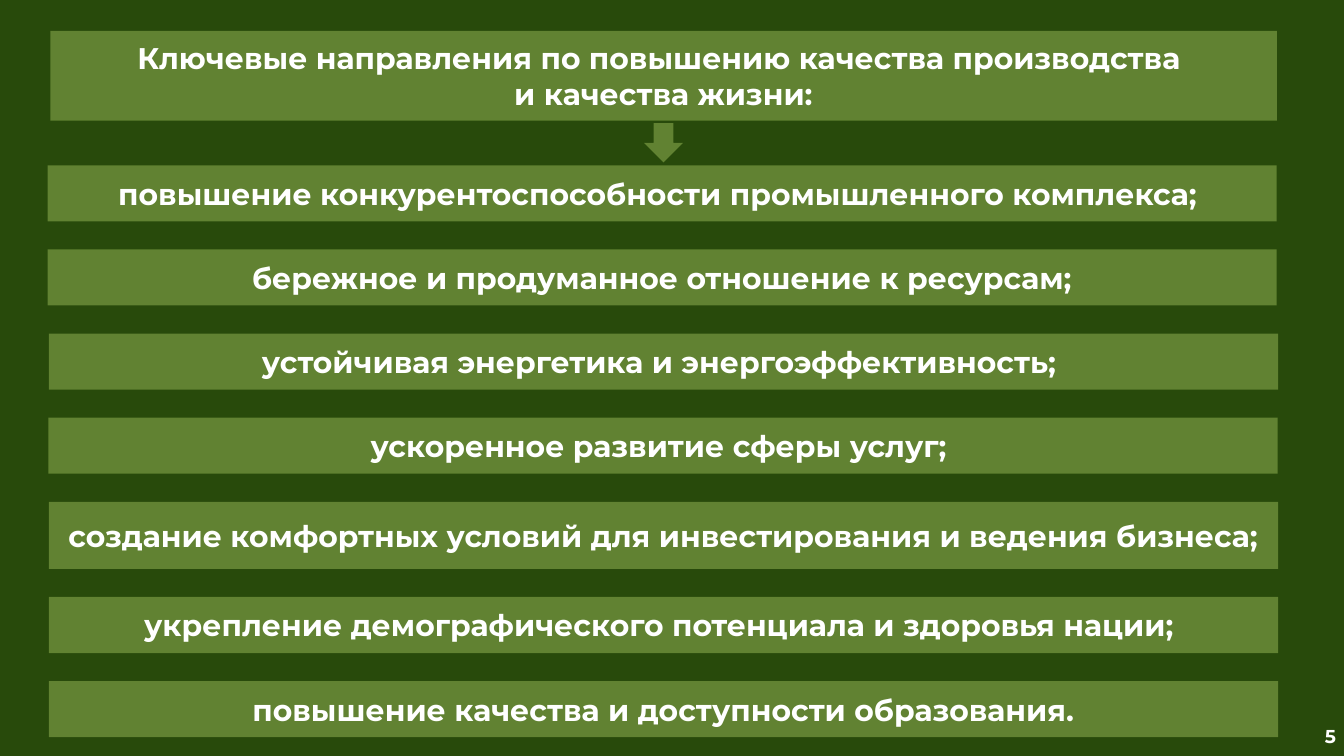
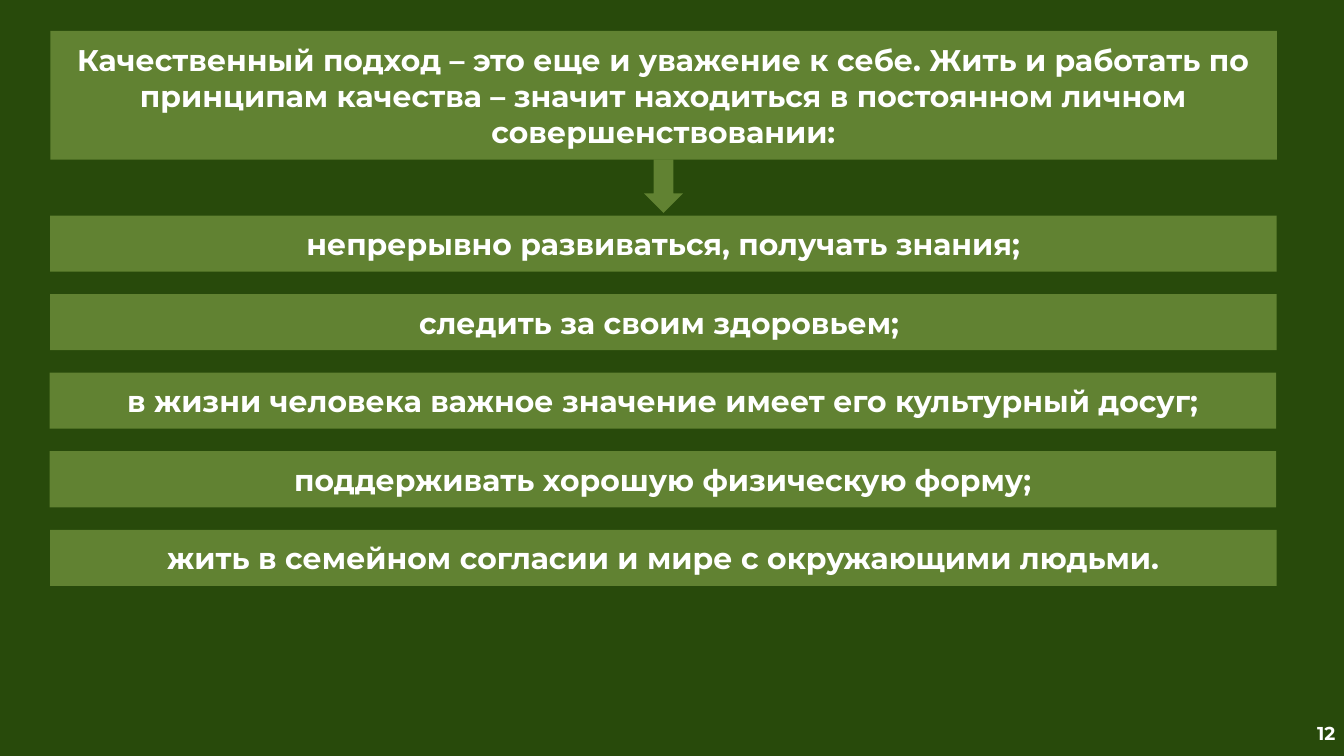
"""Two slides: a headline band, an arrow and a column of text bands."""
from lxml import etree
from pptx import Presentation
from pptx.dml.color import RGBColor
from pptx.enum import shapes, text
from pptx.oxml import ns
from pptx.util import Cm, Pt

FONT, DARK, BAND, WHITE = "Montserrat", "284A0B", "9BBB59", "FFFFFF"
HEAD_LEFT, HEAD_TOP, HEAD_W = 1.9, 1.17, 46.36
BAND_H, ARROW_LEFT, ARROW_W = 2.12, 24.34, 1.48

SLIDES = [
    dict(
        number="5", number_at=(44.83, 27.33),
        title=["Ключевые направления по повышению качества производства ",
               "и качества жизни:"],
        title_h=3.39, arrow=(4.66, 1.48), top=6.25, gap=1.06, width=46.46,
        items=[
            (1.8, BAND_H, "повышение конкурентоспособности промышленного комплекса; "),
            (1.8, BAND_H, "бережное и продуманное отношение к ресурсам;"),
            (1.85, BAND_H, "устойчивая энергетика и энергоэффективность; "),
            (1.83, BAND_H, "ускоренное развитие сферы услуг; "),
            (1.85, 2.54, "создание комфортных условий для инвестирования и ведения бизнеса;"),
            (1.85, BAND_H, "укрепление демографического потенциала и здоровья нации; "),
            (1.85, BAND_H, "повышение качества и доступности образования."),
        ],
    ),
    dict(
        number="12", number_at=(44.81, 27.2),
        title=["Качественный подход – это еще и уважение к себе. Жить и работать по "
               "принципам качества – значит находиться в постоянном личном "
               "совершенствовании:"],
        title_h=4.87, arrow=(6.04, 2.01), top=8.15, gap=0.85, width=HEAD_W,
        items=[
            (1.9, BAND_H, "непрерывно развиваться, получать знания;"),
            (1.9, BAND_H, "следить за своим здоровьем; "),
            (1.88, BAND_H, "в жизни человека важное значение имеет его культурный досуг;"),
            (1.88, BAND_H, "поддерживать хорошую физическую форму;"),
            (1.9, BAND_H, "жить в семейном согласии и мире с окружающими людьми."),
        ],
    ),
]


def rgb(code):
    return RGBColor.from_string(code)


def fill_band(sp):
    sp.fill.solid()
    sp.fill.fore_color.rgb = rgb(BAND)
    color = sp.fill._xPr.find(".//" + ns.qn("a:srgbClr"))
    etree.SubElement(color, ns.qn("a:alpha")).set("val", "50000")
    sp.line.fill.background()


def write(sp, lines, size=32, align=text.PP_ALIGN.CENTER):
    tf = sp.text_frame
    tf.word_wrap = True
    tf.auto_size = text.MSO_AUTO_SIZE.NONE
    tf.vertical_anchor = text.MSO_ANCHOR.MIDDLE
    p = tf.paragraphs[0]
    p.alignment = align
    for i, line in enumerate(lines):
        if i:
            p.add_line_break()
        r = p.add_run()
        r.text = line
        r.font.name, r.font.size, r.font.bold = FONT, Pt(size), True
        r.font.color.rgb = rgb(WHITE)


def add_band(s, kind, left, top, width, height):
    sp = s.shapes.add_shape(kind, Cm(left), Cm(top), Cm(width), Cm(height))
    sp.shadow.inherit = False
    fill_band(sp)
    return sp


def add_title(s, lines, height):
    sp = s.shapes.title
    sp.left, sp.top, sp.width, sp.height = map(Cm, (HEAD_LEFT, HEAD_TOP, HEAD_W, height))
    fill_band(sp)
    write(sp, lines)


def add_number(s, number, left, top):
    sp = s.shapes.add_textbox(Cm(left), Cm(top), Cm(5.92), Cm(1.02))
    write(sp, [number], 20, text.PP_ALIGN.RIGHT)


def build_slide(prs, data):
    s = prs.slides.add_slide(prs.slide_layouts[5])
    add_number(s, data["number"], *data["number_at"])
    add_title(s, data["title"], data["title_h"])
    top = data["top"]
    for left, height, line in data["items"]:
        sp = add_band(s, shapes.MSO_SHAPE.RECTANGLE, left, top, data["width"], height)
        write(sp, [line])
        top += height + data["gap"]
    arrow_top, arrow_h = data["arrow"]
    add_band(s, shapes.MSO_SHAPE.DOWN_ARROW, ARROW_LEFT, arrow_top, ARROW_W, arrow_h)


def main():
    prs = Presentation()
    prs.slide_width, prs.slide_height = Cm(50.8), Cm(28.58)
    background = prs.slide_master.background.fill
    background.solid()
    background.fore_color.rgb = rgb(DARK)
    for data in SLIDES:
        build_slide(prs, data)
    prs.save("out.pptx")


if __name__ == "__main__":
    main()
